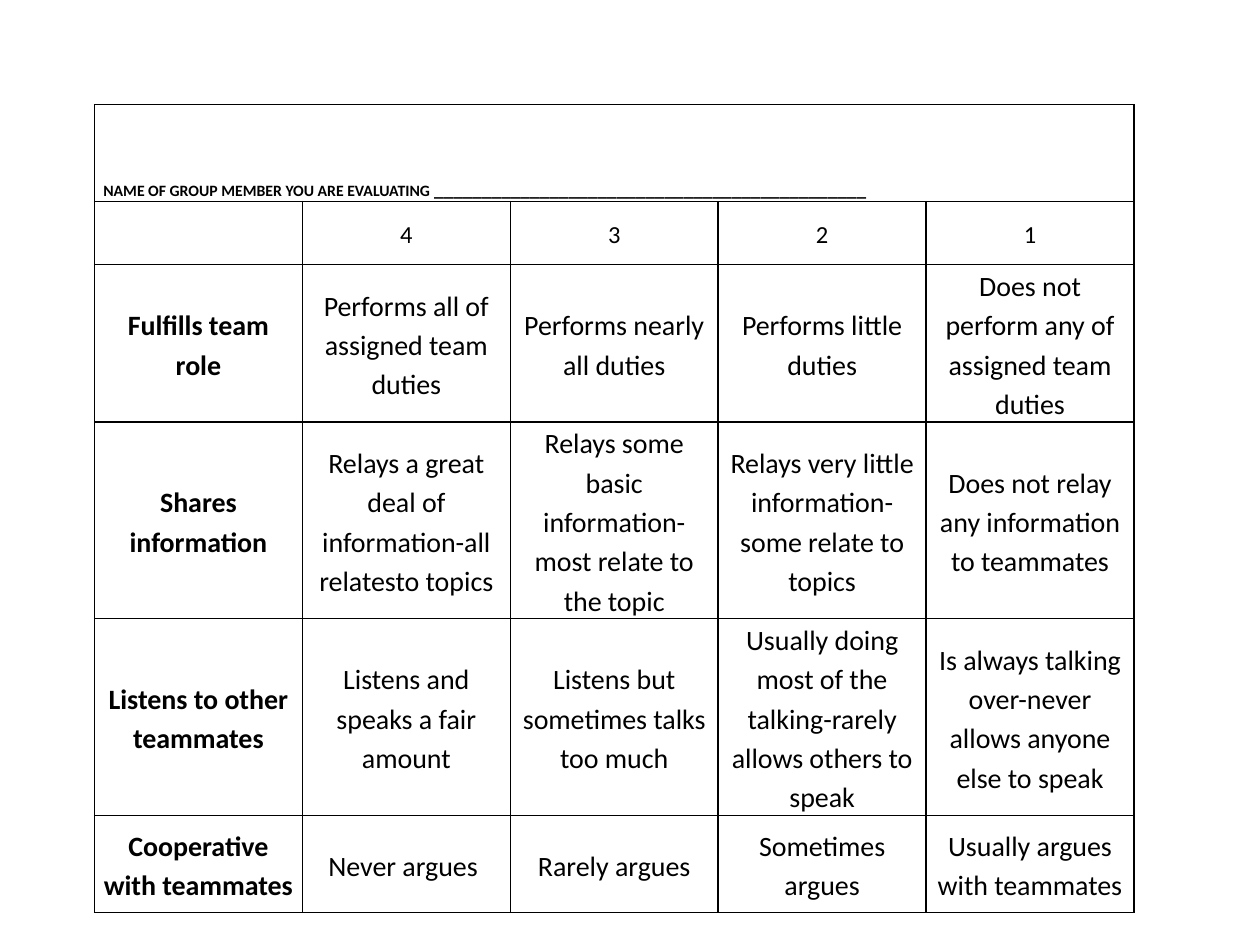
from lxml.etree import SubElement
from pptx import Presentation
from pptx.dml.color import RGBColor
from pptx.enum.text import MSO_ANCHOR, PP_ALIGN
from pptx.oxml.ns import qn
from pptx.util import Inches, Pt

BLACK = RGBColor(0, 0, 0)
FACE = "Calibri"
LABEL = "NAME OF GROUP MEMBER YOU ARE EVALUATING"
HEIGHTS = [0.77, 0.5, 1.02, 1.33, 1.12, 0.77]
SCORES = ["", "4", "3", "2", "1"]
RUBRIC = [
    ["Fulfills team role", "Performs all of assigned team duties",
     "Performs nearly all duties", "Performs little duties",
     "Does not perform any of assigned team duties"],
    ["Shares information",
     "Relays a great deal of information-all relatesto topics",
     "Relays some basic information-most relate to the topic",
     "Relays very little information-some relate to topics",
     "Does not relay any information to teammates"],
    ["Listens to other teammates", "Listens and speaks a fair amount",
     "Listens but sometimes talks too much",
     "Usually doing most of the talking-rarely allows others to speak",
     "Is always talking over-never allows anyone else to speak"],
    ["Cooperative with teammates ", "Never argues ", "Rarely argues",
     "Sometimes argues", "Usually argues with teammates"],
]


def add_grid(slide):
    count = len(SCORES)
    frame = slide.shapes.add_table(
        len(HEIGHTS), count, Inches(0.75), Inches(0.83),
        Inches(1.65 * count), Inches(sum(HEIGHTS)))
    table = frame.table
    table.first_row = table.horz_banding = False
    for row, height in zip(table.rows, HEIGHTS):
        row.height = Inches(height)
    for cell in table.iter_cells():
        style_cell(cell)
    return table


def style_cell(cell):
    cell.margin_left = cell.margin_right = Inches(0.07)
    cell.margin_top = cell.margin_bottom = 0
    cell.vertical_anchor = MSO_ANCHOR.MIDDLE
    props = cell._tc.get_or_add_tcPr()
    for side in ("lnL", "lnR", "lnT", "lnB"):
        line = SubElement(props, qn(f"a:{side}"), w=str(Pt(1)))
        fill = SubElement(line, qn("a:solidFill"))
        SubElement(fill, qn("a:srgbClr"), val=str(BLACK))
    cell.fill.background()


def set_font(font, size, bold):
    font.name = FACE
    font.size = Pt(size)
    font.bold = bold
    font.color.rgb = BLACK


def fill_head(table):
    cell = table.cell(0, 0)
    cell.merge(table.cell(0, len(SCORES) - 1))
    cell.vertical_anchor = MSO_ANCHOR.BOTTOM
    para = cell.text_frame.paragraphs[0]
    para.line_spacing = 1.15
    for text, size in ((LABEL, 9), (" " + "_" * 45, 11)):
        run = para.add_run()
        run.text = text
        set_font(run.font, size, True)


def fill_row(table, row, texts, size):
    for col, text in enumerate(texts):
        para = table.cell(row, col).text_frame.paragraphs[0]
        para.alignment = PP_ALIGN.CENTER
        para.line_spacing = 1.15
        para.text = text
        set_font(para.font, size, col == 0)


def main():
    deck = Presentation()
    deck.slide_width = Inches(10)
    deck.slide_height = Inches(7.5)
    slide = deck.slides.add_slide(deck.slide_layouts[6])
    table = add_grid(slide)
    fill_head(table)
    fill_row(table, 1, SCORES, 14)
    for row, texts in enumerate(RUBRIC, 2):
        fill_row(table, row, texts, 16)
    deck.save("out.pptx")


if __name__ == "__main__":
    main()
